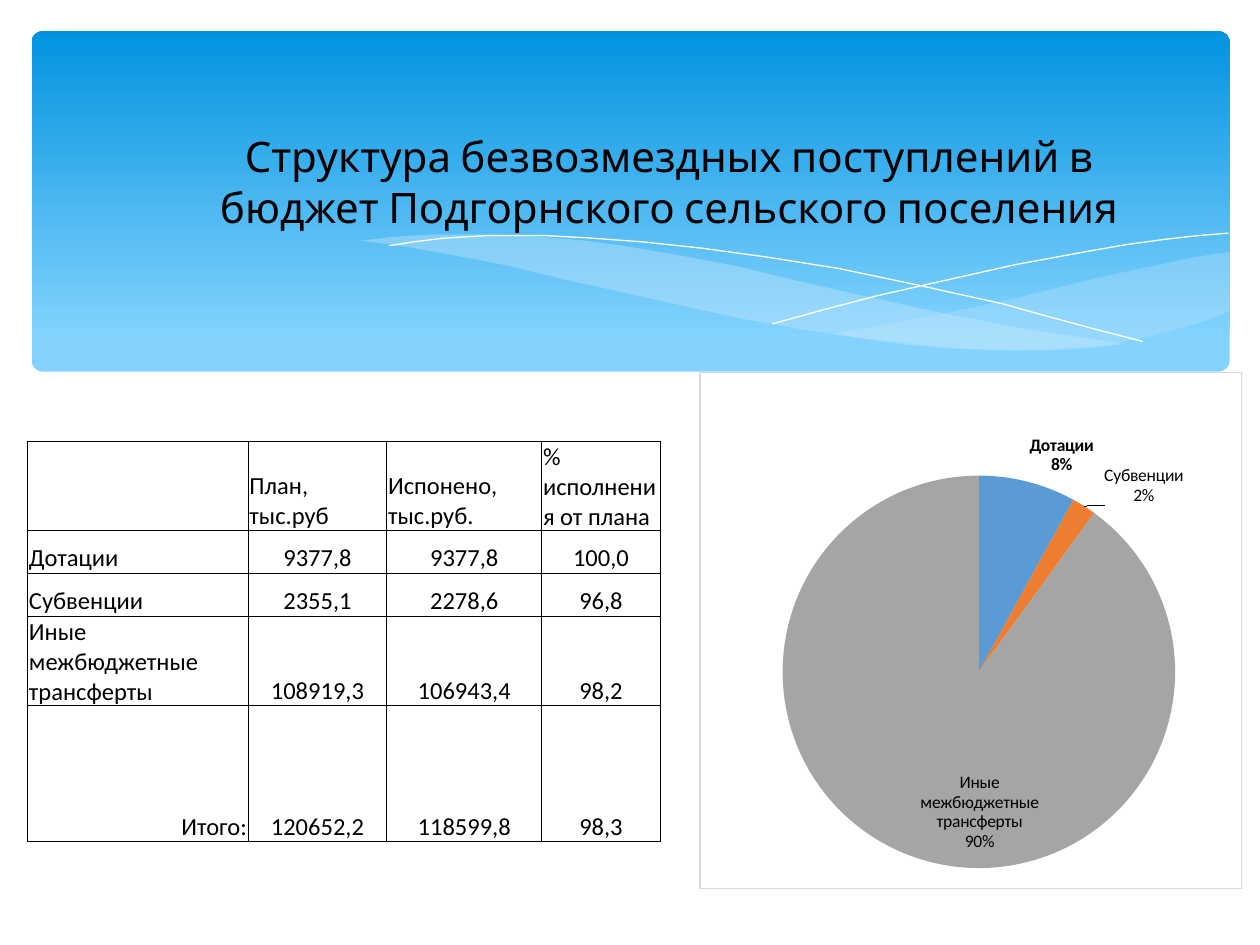
from dataclasses import dataclass

from lxml import etree
from pptx import Presentation
from pptx.chart.data import CategoryChartData
from pptx.dml.color import RGBColor
from pptx.enum.chart import XL_CHART_TYPE, XL_LABEL_POSITION
from pptx.enum.shapes import MSO_SHAPE
from pptx.enum.text import MSO_ANCHOR, PP_ALIGN
from pptx.oxml import parse_xml
from pptx.oxml.ns import nsdecls, qn
from pptx.util import Inches, Pt

PIE = XL_CHART_TYPE.PIE
OUTSIDE, INSIDE = XL_LABEL_POSITION.OUTSIDE_END, XL_LABEL_POSITION.INSIDE_END
ROUNDED = MSO_SHAPE.ROUNDED_RECTANGLE
BOTTOM = MSO_ANCHOR.BOTTOM
LEFT, CENTER, RIGHT = PP_ALIGN.LEFT, PP_ALIGN.CENTER, PP_ALIGN.RIGHT


@dataclass(frozen=True)
class Theme:
    """Colours, fonts and type sizes of the slide."""
    sky_light: str = "83D3FE"
    sky_dark: str = "0293E0"
    wave: str = "C6E7FC"
    white: str = "FFFFFF"
    black: str = "000000"
    frame: str = "D9D9D9"
    slices: tuple = ("5B9BD5", "ED7D31", "A5A5A5")
    title_font: str = "Cabin"
    body_font: str = "Calibri"
    title_size: int = 24
    table_size: int = 14
    label_size: int = 10


THEME = Theme()

RIGHT_WAVE = [
    (9.76, 2), (9.48, 2.04), (9.21, 2.1), (8.91, 2.16), (8.61, 2.23), (8.05, 2.37),
    (7.53, 2.48), (7.06, 2.57), (6.61, 2.65), (6.91, 2.69), (7.19, 2.72), (7.45, 2.75),
    (7.69, 2.77), (8.03, 2.78), (8.35, 2.77), (8.63, 2.75), (8.89, 2.72), (9.13, 2.67),
    (9.35, 2.61), (9.56, 2.55), (9.76, 2.47)]
LONG_WAVE = [
    (8.93, 2.73), (8.66, 2.69), (8.07, 2.6), (7.41, 2.47), (6.68, 2.31), (6.29, 2.22),
    (5.84, 2.11), (5.41, 2.03), (5.01, 1.96), (4.65, 1.91), (4.2, 1.87), (3.8, 1.86),
    (3.44, 1.86), (3.13, 1.88), (2.86, 1.91), (3.23, 1.96), (3.62, 2.03), (4.04, 2.11),
    (4.49, 2.22), (5.3, 2.4), (5.84, 2.52), (6.34, 2.61), (6.8, 2.68), (7.22, 2.74),
    (7.61, 2.77), (7.96, 2.78), (8.28, 2.78), (8.57, 2.77), (8.76, 2.75)]
FALLING_LINE = [
    (3.09, 1.95), (3.28, 1.92), (3.53, 1.89), (3.87, 1.87), (4.33, 1.87), (4.69, 1.89),
    (5.1, 1.92), (5.57, 1.97), (6.08, 2.04), (6.65, 2.13), (7.27, 2.26), (7.95, 2.41),
    (8.31, 2.51), (8.68, 2.61), (9.07, 2.71)]
RISING_LINE = [
    (6.13, 2.57), (6.53, 2.46), (6.95, 2.35), (7.48, 2.23), (8.06, 2.1), (8.66, 1.99),
    (8.95, 1.94), (9.24, 1.9), (9.51, 1.87), (9.75, 1.85)]

TITLE = "Структура безвозмездных поступлений в бюджет Подгорнского сельского поселения"
COLUMNS = [1.75, 1.1, 1.23, 0.94]
ROW_HEIGHTS = [0.7, 0.34, 0.34, 0.71, 1.08]
ROWS = [
    ["", "План, тыс.руб", "Испонено, тыс.руб.", "% исполнения от плана"],
    ["Дотации", "9377,8", "9377,8", "100,0"],
    ["Субвенции", "2355,1", "2278,6", "96,8"],
    ["Иные межбюджетные трансферты", "108919,3", "106943,4", "98,2"],
    ["Итого:", "120652,2", "118599,8", "98,3"]]
SHARES = [8, 2, 90]


def rgb(color):
    """Turn a hex string into a colour."""
    return RGBColor.from_string(color)


def add_run(p, text, font, size):
    """Add one black run to a paragraph."""
    r = p.add_run()
    r.text = text
    r.font.name, r.font.size = font, Pt(size)
    r.font.color.rgb = rgb(THEME.black)


def add_banner(s):
    """Draw the rounded sky panel with its gradient."""
    sp = s.shapes.add_shape(ROUNDED, Inches(0.25), Inches(0.25), Inches(9.51), Inches(2.7))
    sp.adjustments[0] = 0.034
    sp.shadow.inherit = False
    sp.line.fill.background()
    sp.fill.gradient()
    sp.fill.gradient_angle = 90
    stops = ((0.1, THEME.sky_light), (1, THEME.sky_dark))
    for stop, (position, color) in zip(sp.fill.gradient_stops, stops):
        stop.position, stop.color.rgb = position, rgb(color)


def add_outline(s, points, closed):
    """Draw a freeform through points given in inches."""
    (x, y), *rest = [(Inches(x), Inches(y)) for x, y in points]
    builder = s.shapes.build_freeform(x, y)
    builder.add_line_segments(rest, close=closed)
    sp = builder.convert_to_shape()
    sp.shadow.inherit = False
    return sp


def add_wave(s, points, opacity):
    """Draw a translucent wave."""
    sp = add_outline(s, points, True)
    sp.line.fill.background()
    sp.fill.solid()
    sp.fill.fore_color.rgb = rgb(THEME.wave)
    color = sp._element.spPr.find(qn("a:solidFill"))[0]
    etree.SubElement(color, qn("a:alpha"), val=str(opacity * 1000))


def add_curve(s, points):
    """Draw a hairline curve."""
    sp = add_outline(s, points, False)
    sp.fill.background()
    sp.line.color.rgb = rgb(THEME.white)
    sp.line.width = Pt(0)


def add_title(s):
    """Add the centred heading."""
    tf = s.shapes.add_textbox(Inches(1.61), Inches(0.99), Inches(7.4), Inches(0.9)).text_frame
    tf.word_wrap = True
    p = tf.paragraphs[0]
    p.alignment = CENTER
    add_run(p, TITLE, THEME.title_font, THEME.title_size)


def style_cell(cell):
    """Give a cell its margins, clear fill and thin borders."""
    cell.vertical_anchor = BOTTOM
    cell.margin_left = cell.margin_right = cell.margin_top = Inches(0.01)
    cell.margin_bottom = 0
    tc_pr = cell._tc.get_or_add_tcPr()
    for side in "LRTB":
        tc_pr.append(parse_xml(
            f'<a:ln{side} {nsdecls("a")} w="6350"><a:solidFill>'
            f'<a:srgbClr val="{THEME.black}"/></a:solidFill></a:ln{side}>'))
    cell.fill.background()


def add_budget_table(s):
    """Add the plan and execution table."""
    table = s.shapes.add_table(len(ROWS), len(COLUMNS), Inches(0.22), Inches(3.5),
                               Inches(sum(COLUMNS)), Inches(sum(ROW_HEIGHTS))).table
    table.first_row = table.horz_banding = False
    for column, width in zip(table.columns, COLUMNS):
        column.width = Inches(width)
    for i, (row, height) in enumerate(zip(ROWS, ROW_HEIGHTS)):
        table.rows[i].height = Inches(height)
        for j, text in enumerate(row):
            cell = table.cell(i, j)
            style_cell(cell)
            p = cell.text_frame.paragraphs[0]
            p.alignment = CENTER if i and j else RIGHT if text == ROWS[-1][0] else LEFT
            add_run(p, text, THEME.body_font, THEME.table_size)


def manual_layout(**values):
    """Build a chart layout element."""
    items = "".join(f'<c:{key} val="{value}"/>' for key, value in values.items())
    return parse_xml(f'<c:layout {nsdecls("c")}><c:manualLayout>{items}'
                     '</c:manualLayout></c:layout>')


def style_slice(point, color, position, bold):
    """Colour a slice and label it with category and percentage."""
    point.format.fill.solid()
    point.format.fill.fore_color.rgb = rgb(color)
    label = point.data_label
    label.font.name, label.font.size = THEME.body_font, Pt(THEME.label_size)
    label.font.bold = bold
    label.font.color.rgb = rgb(THEME.black)
    label.position = position


def add_share_pie(s):
    """Add the pie chart of transfer shares."""
    data = CategoryChartData()
    data.categories = [row[0] for row in ROWS[1:4]]
    data.add_series("Доля", SHARES)
    chart = s.shapes.add_chart(PIE, Inches(5.55), Inches(2.95), Inches(4.31), Inches(4.11),
                               data).chart
    chart.has_title = chart.has_legend = False
    chart.font.name, chart.font.size = THEME.body_font, Pt(THEME.label_size)
    series = chart.plots[0].series[0]
    for i, position in enumerate((OUTSIDE, OUTSIDE, INSIDE)):
        style_slice(series.points[i], THEME.slices[i], position, i == 0)
    labels = series._element.xpath(".//c:dLbl")
    for label in labels:
        for tag, shown in (("showVal", 0), ("showCatName", 1), ("showPercent", 1)):
            label.find(qn(f"c:{tag}")).set("val", str(shown))
        etree.SubElement(label, qn("c:separator")).text = "\n"
    labels[1].insert(1, manual_layout(x=0.03, y=0.01))
    space = chart._chartSpace
    plot_area = space.chart.plotArea
    for layout in plot_area.findall(qn("c:layout")):
        plot_area.remove(layout)
    plot_area.insert(0, manual_layout(layoutTarget="inner", xMode="edge", yMode="edge",
                                      x=0.15, y=0.2, w=0.73, h=0.76))
    space.chart.addnext(parse_xml(
        f'<c:spPr {nsdecls("c", "a")}><a:solidFill><a:srgbClr val="{THEME.white}"/></a:solidFill>'
        f'<a:ln w="9525"><a:solidFill><a:srgbClr val="{THEME.frame}"/></a:solidFill></a:ln></c:spPr>'))


def main():
    """Build and save the slide."""
    prs = Presentation()
    prs.slide_width, prs.slide_height = Inches(10), Inches(7.5)
    s = prs.slides.add_slide(prs.slide_layouts[6])
    add_banner(s)
    add_wave(s, RIGHT_WAVE, 29)
    add_wave(s, LONG_WAVE, 40)
    add_curve(s, FALLING_LINE)
    add_curve(s, RISING_LINE)
    add_title(s)
    add_budget_table(s)
    add_share_pie(s)
    prs.save("out.pptx")


if __name__ == "__main__":
    main()
